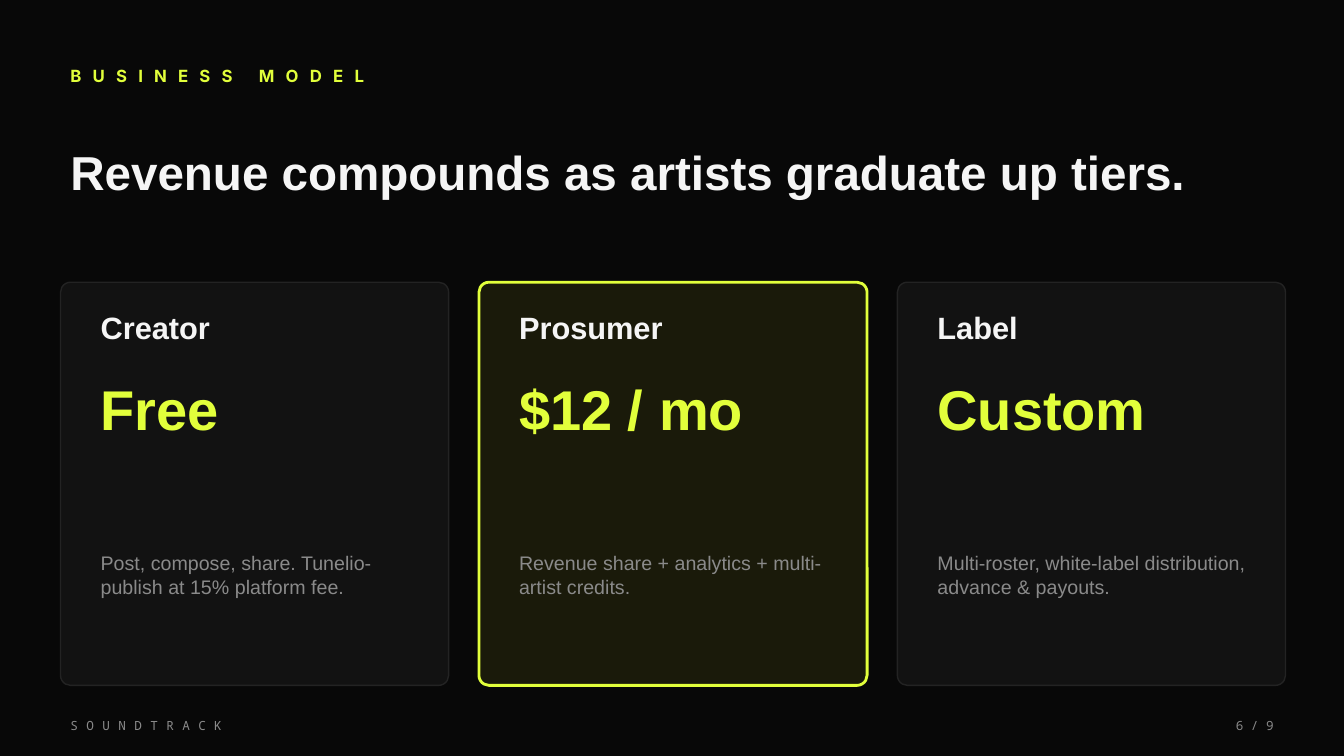
from pptx import Presentation
from pptx import util as u
from pptx.dml import color
from pptx.enum import shapes, text

COLORS = {
    "background": "080808",
    "accent": "E2FF3B",
    "heading": "F5F5F5",
    "muted": "8A8A8A",
    "card": "121212",
    "card_line": "232323",
    "featured_card": "1A1A0A",
}

TIERS = [
    ("Creator", "Free", "Post, compose, share. Tunelio-publish at 15% platform fee.", False),
    ("Prosumer", "$12 / mo", "Revenue share + analytics + multi-artist credits.", True),
    ("Label", "Custom", "Multi-roster, white-label distribution, advance & payouts.", False),
]


def rgb(name):
    return color.RGBColor.from_string(COLORS[name])


def add_label(slide, box, wording, size, tint, font="Arial", bold=False, spacing=0,
              align=text.PP_ALIGN.LEFT):
    frame = slide.shapes.add_textbox(*(u.Inches(length) for length in box)).text_frame
    frame.word_wrap = True
    frame.vertical_anchor = text.MSO_ANCHOR.MIDDLE
    frame.text = wording
    line = frame.paragraphs[0]
    line.alignment = align
    run = line.runs[0]
    run.font.name = font
    run.font.size = u.Pt(size)
    run.font.bold = bold
    run.font.color.rgb = rgb(tint)
    if spacing:
        run._r.get_or_add_rPr().set("spc", str(spacing * 100))


def add_header(slide, left, top, width):
    add_label(slide, (left, top, width, 0.4), "BUSINESS MODEL", 12, "accent",
              font="Inter", bold=True, spacing=8)
    add_label(slide, (left, top + 0.65, width, 1),
              "Revenue compounds as artists graduate up tiers.", 34, "heading", bold=True)


def add_tier(slide, left, top, width, height, tier):
    name, price, offer, featured = tier
    card = slide.shapes.add_shape(
        shapes.MSO_SHAPE.ROUNDED_RECTANGLE,
        u.Inches(left), u.Inches(top), u.Inches(width), u.Inches(height))
    card.adjustments[0] = 0.026
    card.shadow.inherit = False
    card.fill.solid()
    card.fill.fore_color.rgb = rgb("featured_card" if featured else "card")
    card.line.color.rgb = rgb("accent" if featured else "card_line")
    card.line.width = u.Pt(2 if featured else 1)

    inner_left, inner_width = left + 0.3, width - 0.45
    add_label(slide, (inner_left, top + 0.2, inner_width, 0.5), name, 22, "heading", bold=True)
    add_label(slide, (inner_left, top + 0.8, inner_width, 0.9), price, 40, "accent", bold=True)
    add_label(slide, (inner_left, top + 2, inner_width, 1.8), offer, 14, "muted")


def add_tiers(slide, left, top, width, height, gap=0.3):
    card_width = (width - gap * (len(TIERS) - 1)) / len(TIERS)
    for index, tier in enumerate(TIERS):
        add_tier(slide, left + index * (card_width + gap), top, card_width, height, tier)


def add_footer(slide, left, top, width):
    add_label(slide, (left, top, 4, 0.3), "SOUNDTRACK", 9, "muted",
              font="Noto Sans Mono", spacing=6)
    add_label(slide, (left + width - 1, top, 1, 0.3), "6 / 9", 9, "muted",
              font="Noto Sans Mono", align=text.PP_ALIGN.RIGHT)


def main():
    deck = Presentation()
    deck.slide_width = u.Inches(13.33)
    deck.slide_height = u.Inches(7.5)
    slide = deck.slides.add_slide(deck.slide_layouts[6])
    slide.background.fill.solid()
    slide.background.fill.fore_color.rgb = rgb("background")
    add_header(slide, 0.6, 0.55, 12)
    add_tiers(slide, 0.6, 2.8, 12.15, 4)
    add_footer(slide, 0.6, 7.05, 12.13)
    deck.save("out.pptx")


if __name__ == "__main__":
    main()
